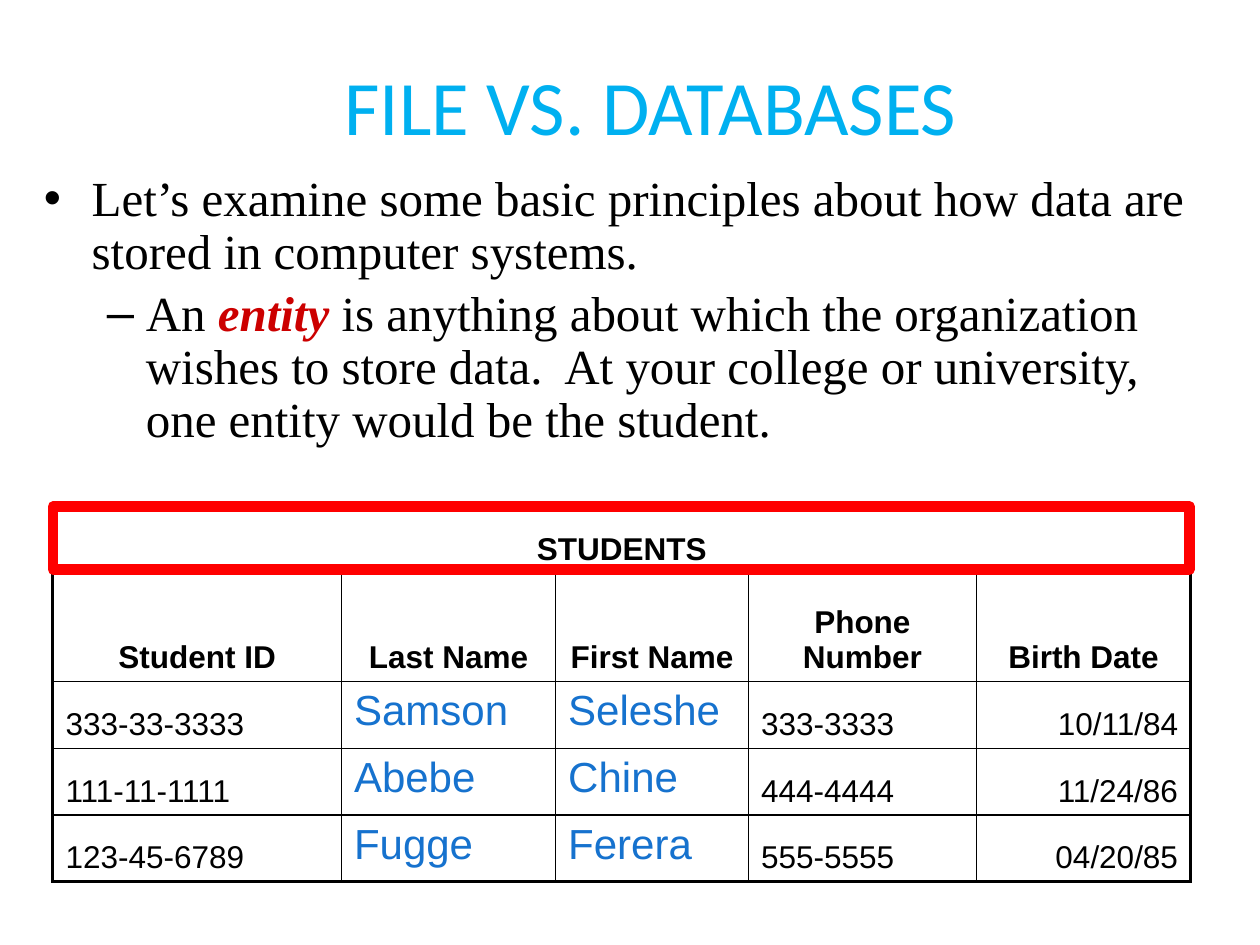
from pptx import Presentation
from pptx.dml.color import RGBColor
from pptx.enum.shapes import MSO_SHAPE
from pptx.enum.text import MSO_ANCHOR as ANCHOR, PP_ALIGN as ALIGN
from pptx.oxml.ns import qn
from pptx.util import Emu, Pt
from lxml.etree import SubElement

PX = 9144
BLACK, NAME_BLUE = "000000", "1672CE"
COLUMNS = [229, 170, 153, 181, 170]
ROWS = [53, 86, 53, 53, 53]
HEADERS = ["Student ID", "Last Name", "First Name", "Phone Number", "Birth Date"]
STUDENTS = [
    ["333-33-3333", "Samson", "Seleshe", "333-3333", "10/11/84"],
    ["111-11-1111", "Abebe", "Chine", "444-4444", "11/24/86"],
    ["123-45-6789", "Fugge", "Ferera", "555-5555", "04/20/85"],
]


def px(*values):
    """Turn px lengths into EMU."""
    return [Emu(v * PX) for v in values]


def rgb(hex_color):
    """Return the colour for a hex string."""
    return RGBColor.from_string(hex_color)


def add_run(p, text, size, font, color=BLACK, bold=False, italic=False):
    """Add one formatted run to a paragraph."""
    r = p.add_run()
    r.text = text
    r.font.size, r.font.name = Pt(size), font
    r.font.bold, r.font.italic = bold, italic
    r.font.color.rgb = rgb(color)


def add_text_frame(s, box, anchor):
    """Add a wrapping text box and return its text frame."""
    tf = s.shapes.add_textbox(*px(*box)).text_frame
    tf.word_wrap = True
    tf.vertical_anchor = anchor
    return tf


def add_title(s, box, text):
    """Place the centred title."""
    p = add_text_frame(s, box, ANCHOR.MIDDLE).paragraphs[0]
    p.alignment = ALIGN.CENTER
    add_run(p, text, 44, "Calibri", "00B0F0")


def format_bullet(p, char, left, hang, level):
    """Give a paragraph its bullet, indents and spacing."""
    p.level = level
    p.line_spacing, p.space_before = 0.9, Pt(5.6)
    pPr = p._p.get_or_add_pPr()
    pPr.set("marL", str(left * PX))
    pPr.set("indent", str(-hang * PX))
    SubElement(pPr, qn("a:buFont")).set("typeface", "Arial")
    SubElement(pPr, qn("a:buChar")).set("char", char)


def add_body(s, box):
    """Place the two bulleted paragraphs."""
    tf = add_text_frame(s, box, ANCHOR.TOP)
    font = "Times New Roman"
    p = tf.paragraphs[0]
    format_bullet(p, "•", 38, 38, 0)
    add_run(p, "Let’s examine some basic principles about how data are "
               "stored in computer systems.", 28, font)
    p = tf.add_paragraph()
    format_bullet(p, "–", 81, 31, 1)
    add_run(p, "An ", 28, font)
    add_run(p, "entity", 28, font, "CC0000", True, True)
    add_run(p, " is anything about which the organization wishes to store data.  "
               "At your college or university, one entity would be the student.", 28, font)


def set_borders(cell, widths):
    """Draw black cell borders from a mapping of side to points."""
    tcPr = cell._tc.get_or_add_tcPr()
    for i, side in enumerate("LRTB"):
        ln = tcPr.makeelement(qn(f"a:ln{side}"), w=str(Pt(widths[side])))
        fill = SubElement(ln, qn("a:solidFill"))
        SubElement(fill, qn("a:srgbClr")).set("val", BLACK)
        tcPr.insert(i, ln)


def fill_cell(cell, text, align, size=18, color=BLACK, bold=False, anchor=ANCHOR.BOTTOM):
    """Write one table cell."""
    cell.vertical_anchor = anchor
    p = cell.text_frame.paragraphs[0]
    p.alignment = align
    add_run(p, text, size, "Arial", color, bold)


def add_students_table(s, box):
    """Place the students table with a merged heading row."""
    table = s.shapes.add_table(len(ROWS), len(COLUMNS), *px(*box)).table
    table.first_row = table.horz_banding = False
    for col, width in zip(table.columns, px(*COLUMNS)):
        col.width = width
    for row, height in zip(table.rows, px(*ROWS)):
        row.height = height
    table.cell(0, 0).merge(table.cell(0, len(COLUMNS) - 1))
    fill_cell(table.cell(0, 0), "STUDENTS", ALIGN.CENTER, bold=True)
    for c, text in enumerate(HEADERS):
        fill_cell(table.cell(1, c), text, ALIGN.CENTER, bold=True)
    for r, student in enumerate(STUDENTS, 2):
        for c, text in enumerate(student):
            if c in (1, 2):
                fill_cell(table.cell(r, c), text, ALIGN.LEFT, 24, NAME_BLUE, anchor=ANCHOR.TOP)
            else:
                fill_cell(table.cell(r, c), text, ALIGN.RIGHT if c == 4 else ALIGN.LEFT)
    last_row, last_col = len(ROWS) - 1, len(COLUMNS) - 1
    for r in range(len(ROWS)):
        for c in range(len(COLUMNS)):
            cell = table.cell(r, c)
            cell.fill.background()
            set_borders(cell, {
                "L": 2 if c == 0 else 1,
                "R": 2 if c == last_col or r == 0 else 1,
                "T": 2 if r == 0 else 1,
                "B": 2 if r == last_row else 1,
            })


def add_highlight(s, box):
    """Frame the table heading in red."""
    sp = s.shapes.add_shape(MSO_SHAPE.RECTANGLE, *px(*box))
    sp.shadow.inherit = False
    sp.fill.background()
    sp.line.color.rgb = rgb("FF0000")
    sp.line.width = Pt(6)


def main():
    """Build and save the slide."""
    prs = Presentation()
    prs.slide_width, prs.slide_height = px(1000, 750)
    s = prs.slides.add_slide(prs.slide_layouts[6])
    add_title(s, (50, 42, 933, 83), "FILE VS. DATABASES")
    add_body(s, (25, 133, 950, 242))
    add_students_table(s, (42, 402, sum(COLUMNS), sum(ROWS)))
    add_highlight(s, (42, 402, 902, 50))
    prs.save("out.pptx")


if __name__ == "__main__":
    main()
